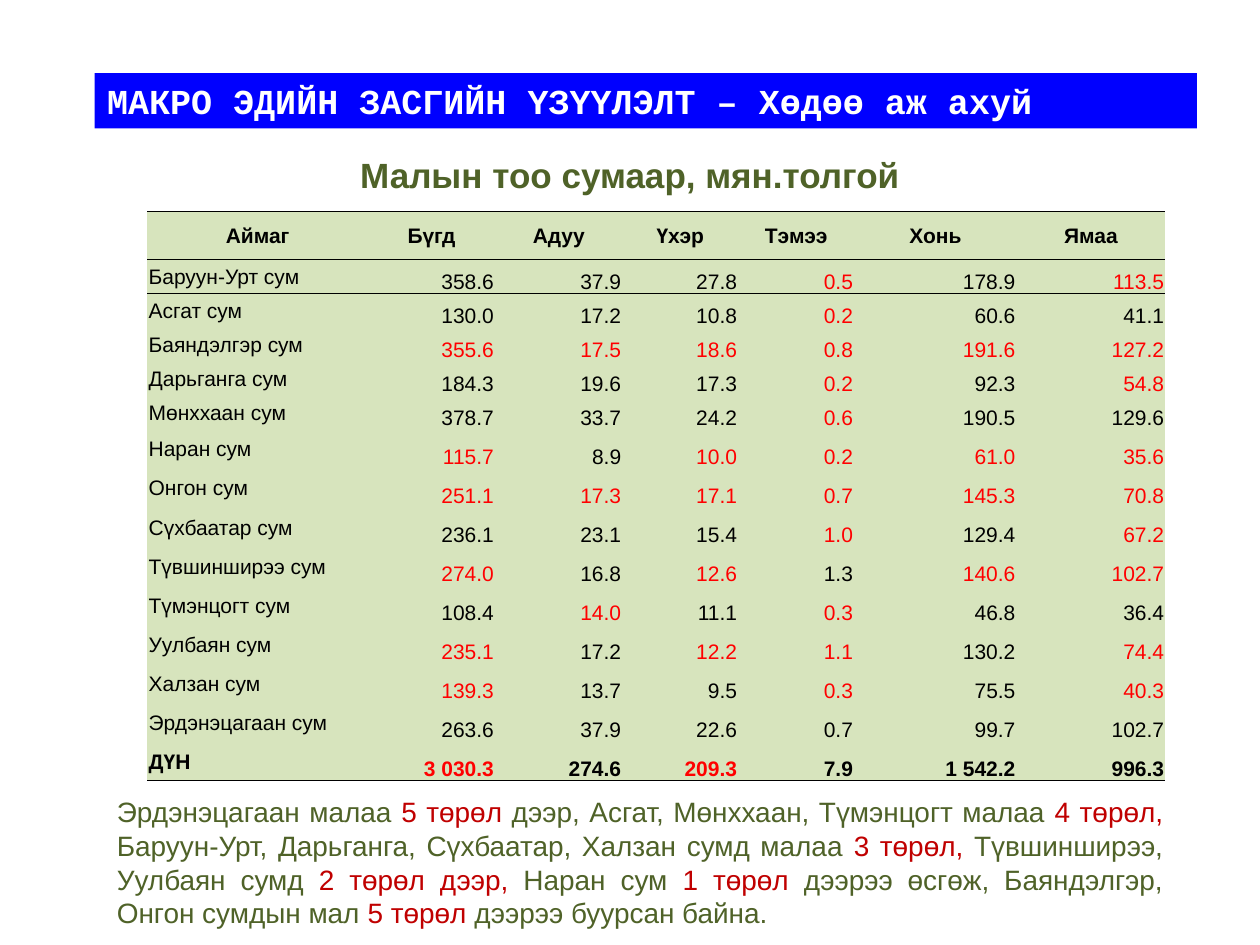
from lxml import etree
from pptx import Presentation
from pptx.dml.color import RGBColor
from pptx.enum.text import MSO_ANCHOR as Anchor, PP_ALIGN as Align
from pptx.oxml.ns import qn
from pptx.util import Inches, Pt

BLUE = RGBColor(0x00, 0x00, 0xFF)
WHITE = RGBColor(0xFF, 0xFF, 0xFF)
BLACK = RGBColor(0x00, 0x00, 0x00)
RED = RGBColor(0xFF, 0x00, 0x00)
DARK_RED = RGBColor(0xC0, 0x00, 0x00)
OLIVE = RGBColor(0x4F, 0x62, 0x28)
PALE_GREEN = RGBColor(0xD7, 0xE4, 0xBD)
NO_STYLE = "{2D5ABB26-0587-4C30-8999-92F81FD0307C}"

HEADINGS = ["Аймаг", "Бүгд", "Адуу", "Үхэр", "Тэмээ", "Хонь", "Ямаа"]
COLUMN_WIDTHS = [1.75, 1.01, 1.01, 0.92, 0.92, 1.29, 1.18]
ROW_HEIGHTS = [0.38] + [0.27] * 5 + [0.31] * 9
# A trailing asterisk marks a figure shown in red.
LIVESTOCK = [
    ["Баруун-Урт сум", "358.6", "37.9", "27.8", "0.5*", "178.9", "113.5*"],
    ["Асгат сум", "130.0", "17.2", "10.8", "0.2*", "60.6", "41.1"],
    ["Баяндэлгэр сум", "355.6*", "17.5*", "18.6*", "0.8*", "191.6*", "127.2*"],
    ["Дарьганга сум", "184.3", "19.6", "17.3", "0.2*", "92.3", "54.8*"],
    ["Мөнххаан сум", "378.7", "33.7", "24.2", "0.6*", "190.5", "129.6"],
    ["Наран сум", "115.7*", "8.9", "10.0*", "0.2*", "61.0*", "35.6*"],
    ["Онгон сум", "251.1*", "17.3*", "17.1*", "0.7*", "145.3*", "70.8*"],
    ["Сүхбаатар сум", "236.1", "23.1", "15.4", "1.0*", "129.4", "67.2*"],
    ["Түвшинширээ сум", "274.0*", "16.8", "12.6*", "1.3", "140.6*", "102.7*"],
    ["Түмэнцогт сум", "108.4", "14.0*", "11.1", "0.3*", "46.8", "36.4"],
    ["Уулбаян сум", "235.1*", "17.2", "12.2*", "1.1*", "130.2", "74.4*"],
    ["Халзан сум", "139.3*", "13.7", "9.5", "0.3*", "75.5", "40.3*"],
    ["Эрдэнэцагаан сум", "263.6", "37.9", "22.6", "0.7", "99.7", "102.7"],
    ["ДҮН", "3 030.3*", "274.6", "209.3*", "7.9", "1 542.2", "996.3"],
]
SUMMARY = [
    ("Эрдэнэцагаан малаа ", OLIVE), ("5 төрөл ", DARK_RED),
    ("дээр, Асгат, Мөнххаан, Түмэнцогт малаа ", OLIVE), ("4 төрөл, ", DARK_RED),
    ("Баруун-Урт, Дарьганга, Сүхбаатар, Халзан сумд малаа ", OLIVE),
    ("3 төрөл, ", DARK_RED), ("Түвшинширээ, Уулбаян сумд ", OLIVE),
    ("2 төрөл дээр, ", DARK_RED), ("Наран сум ", OLIVE), ("1 төрөл ", DARK_RED),
    ("дээрээ өсгөж, Баяндэлгэр, Онгон сумдын мал ", OLIVE),
    ("5 төрөл ", DARK_RED), ("дээрээ буурсан байна.", OLIVE),
]


def add_run(paragraph, text, size, color, bold=False, font="Arial"):
    run = paragraph.add_run()
    run.text = text
    run.font.name = font
    run.font.size = Pt(size)
    run.font.bold = bold
    run.font.color.rgb = color


def add_rule(cell, side, position):
    line = etree.Element(qn(f"a:{side}"), w=str(Pt(0.5)))
    fill = etree.SubElement(line, qn("a:solidFill"))
    etree.SubElement(fill, qn("a:srgbClr"), val=str(BLACK))
    cell._tc.get_or_add_tcPr().insert(position, line)


prs = Presentation()
prs.slide_width, prs.slide_height = Inches(10), Inches(7.5)
slide = prs.slides.add_slide(prs.slide_layouts[5])

banner = slide.shapes.title
banner.left, banner.top = Inches(0.75), Inches(0.58)
banner.width, banner.height = Inches(8.75), Inches(0.44)
banner.fill.solid()
banner.fill.fore_color.rgb = BLUE
banner.text_frame.vertical_anchor = Anchor.TOP
banner_line = banner.text_frame.paragraphs[0]
banner_line.alignment = Align.JUSTIFY
add_run(banner_line, "МАКРО ЭДИЙН ЗАСГИЙН ҮЗҮҮЛЭЛТ – Хөдөө аж ахуй",
        20, WHITE, True, "Courier New")

caption = slide.shapes.add_textbox(Inches(0.75), Inches(1.17), Inches(8.5), Inches(0.44))
caption.text_frame.word_wrap = True
caption_line = caption.text_frame.paragraphs[0]
caption_line.alignment = Align.CENTER
add_run(caption_line, "Малын тоо сумаар, мян.толгой", 20, OLIVE, True)

rows = [HEADINGS] + LIVESTOCK
last = len(rows) - 1
table = slide.shapes.add_table(len(rows), len(HEADINGS), Inches(1.17), Inches(1.68),
                               Inches(8.08), Inches(4.5)).table
table.horz_banding = False
table._tbl.tblPr.find(qn("a:tableStyleId")).text = NO_STYLE
for column, width in zip(table.columns, COLUMN_WIDTHS):
    column.width = Inches(width)
for table_row, height in zip(table.rows, ROW_HEIGHTS):
    table_row.height = Inches(height)

for r, row in enumerate(rows):
    for c, value in enumerate(row):
        cell = table.cell(r, c)
        cell.margin_left = cell.margin_right = cell.margin_top = Inches(0.01)
        cell.margin_bottom = 0
        cell.fill.solid()
        cell.fill.fore_color.rgb = PALE_GREEN
        is_figure = r > 0 and c > 0
        cell.vertical_anchor = Anchor.BOTTOM if is_figure else Anchor.MIDDLE
        entry = cell.text_frame.paragraphs[0]
        if r == 0:
            entry.alignment = Align.CENTER
        else:
            entry.alignment = Align.RIGHT if is_figure else Align.LEFT
        add_run(entry, value.rstrip("*"), 12, RED if value.endswith("*") else BLACK,
                r in (0, last))
        if r in (0, last):
            add_rule(cell, "lnB", 0)
        if r in (0, 1):
            add_rule(cell, "lnT", 0)

summary = slide.shapes.add_textbox(Inches(0.83), Inches(6.26), Inches(8.5), Inches(1.18))
summary.text_frame.word_wrap = True
summary_text = summary.text_frame.paragraphs[0]
summary_text.alignment = Align.JUSTIFY
for phrase, color in SUMMARY:
    add_run(summary_text, phrase, 16, color)

prs.save("out.pptx")
